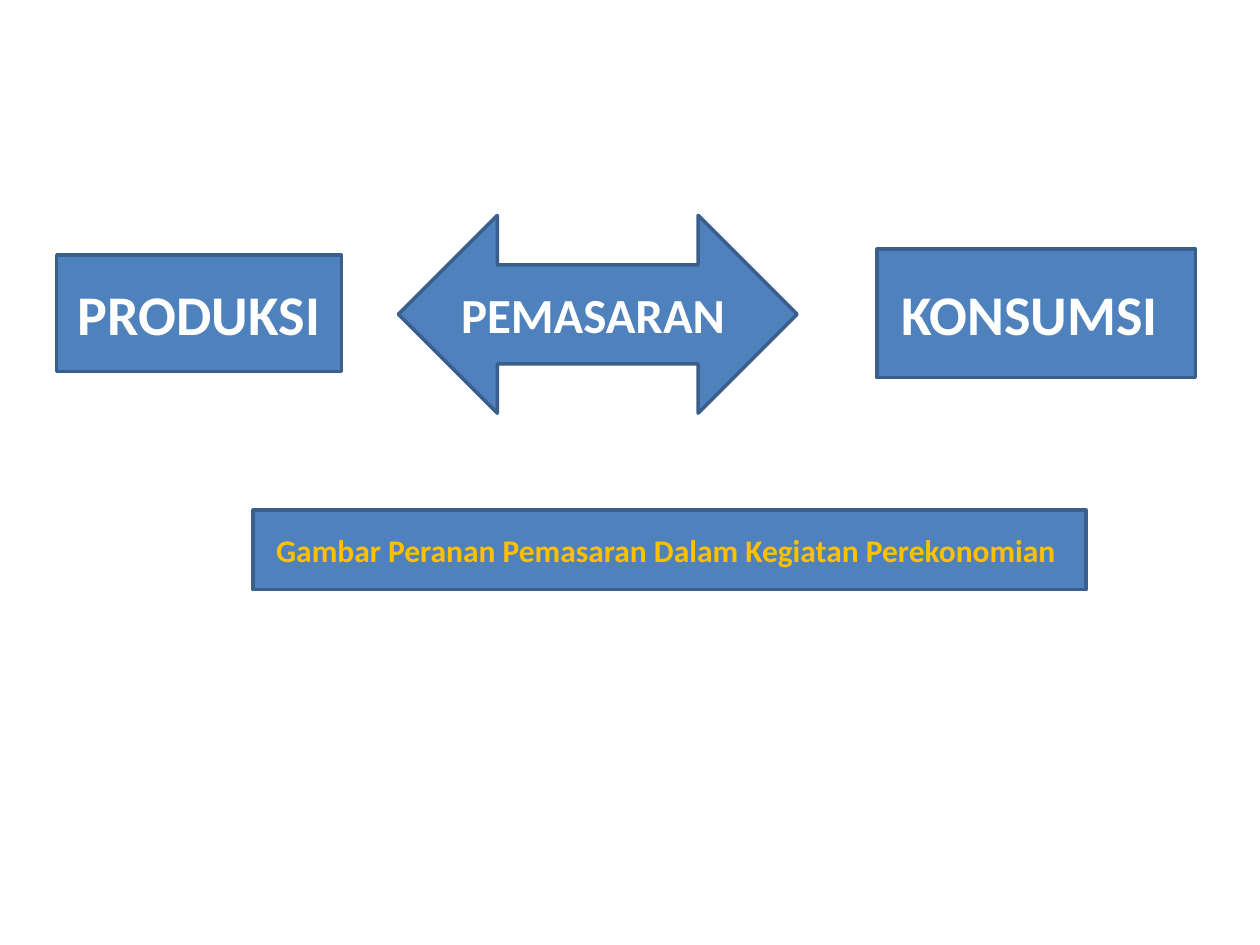
from pptx import Presentation
from pptx.dml.color import RGBColor
from pptx.enum.shapes import MSO_SHAPE as SHAPE
from pptx.enum.text import MSO_ANCHOR as ANCHOR, PP_ALIGN as ALIGN
from pptx.util import Inches, Pt

COLORS = {"fill": "4F81BD", "line": "3A5F8C", "label": "FFFFFF", "caption": "FFC000"}
FONT = "Calibri"


def rgb(name):
    """Return the named colour of the palette."""
    return RGBColor.from_string(COLORS[name])


def add_block(s, kind, box, runs, color="label"):
    """Add a filled shape with centred bold runs of (text, size)."""
    sp = s.shapes.add_shape(kind, *(Inches(v) for v in box))
    sp.shadow.inherit = False
    sp.fill.solid()
    sp.fill.fore_color.rgb = rgb("fill")
    sp.line.color.rgb = rgb("line")
    sp.line.width = Pt(2)
    tf = sp.text_frame
    tf.word_wrap = True
    tf.vertical_anchor = ANCHOR.MIDDLE
    p = tf.paragraphs[0]
    p.alignment = ALIGN.CENTER
    for text, size in runs:
        r = p.add_run()
        r.text = text
        r.font.name = FONT
        r.font.size = Pt(size)
        r.font.bold = True
        r.font.color.rgb = rgb(color)
    return sp


def add_flow(s, box):
    """Place production, marketing and consumption across the box."""
    x, y, w, h = box
    parts = [
        (SHAPE.RECTANGLE, 0, 0.2, 0.25, 0.59, [("PRODUKSI", 32)]),
        (SHAPE.RECTANGLE, 0.72, 0.17, 0.28, 0.65, [("KONSUMSI ", 32)]),
        (SHAPE.LEFT_RIGHT_ARROW, 0.3, 0, 0.35, 1, [("PEMASARAN", 28), (" ", 24)]),
    ]
    for kind, left, top, width, height, runs in parts:
        add_block(s, kind, (x + left * w, y + top * h, width * w, height * h), runs)


def add_caption(s, box):
    """Fill the box with the caption of the diagram."""
    text = "Gambar Peranan Pemasaran Dalam Kegiatan Perekonomian "
    add_block(s, SHAPE.RECTANGLE, box, [(text, 18)], "caption")


def main():
    """Build the slide and save it."""
    prs = Presentation()
    prs.slide_width, prs.slide_height = Inches(10), Inches(7.5)
    s = prs.slides.add_slide(prs.slide_layouts[6])
    add_flow(s, (0.45, 1.71, 9.04, 1.57))
    add_caption(s, (2.01, 4.05, 6.61, 0.63))
    prs.save("out.pptx")


if __name__ == "__main__":
    main()
